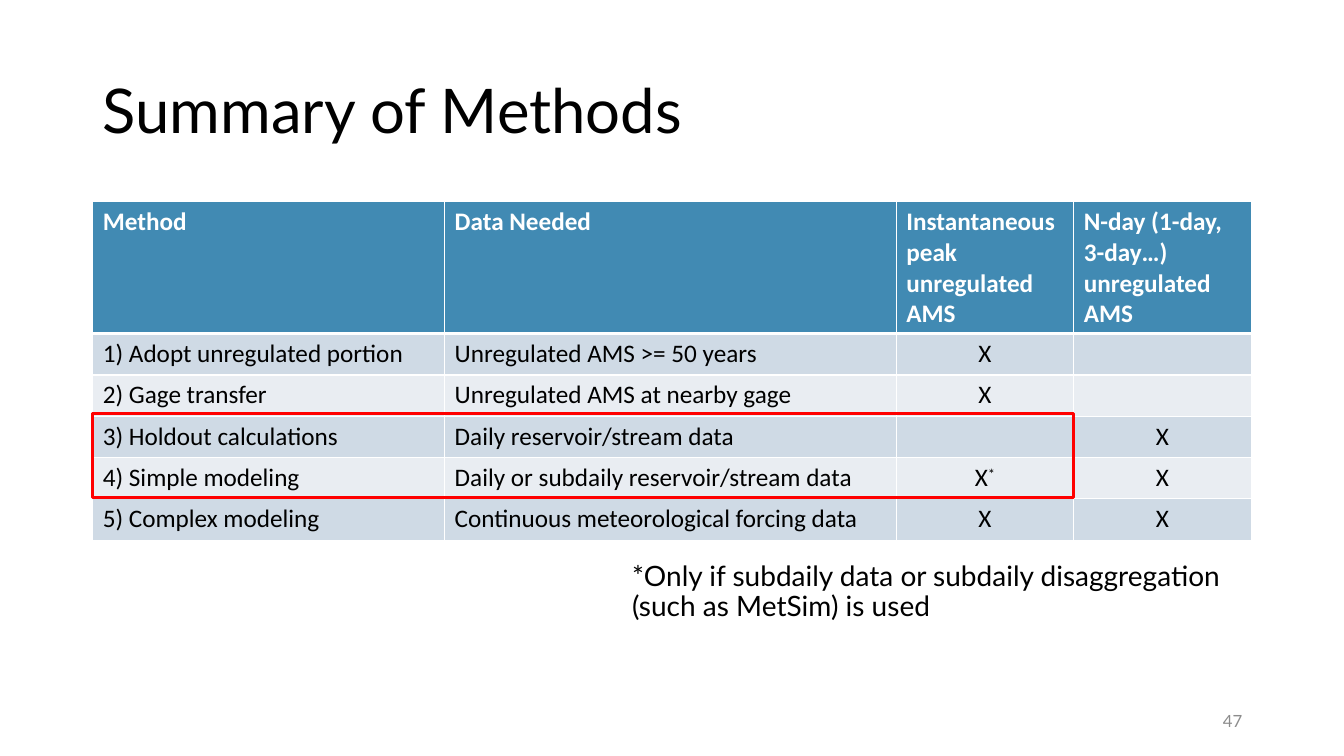
from dataclasses import dataclass

from lxml import etree
from pptx import Presentation, util as u
from pptx.dml.color import RGBColor
from pptx.enum import shapes, text
from pptx.oxml import ns

COLORS = {
    "black": "000000",
    "white": "FFFFFF",
    "header": "418AB3",
    "dark_band": "CFDAE5",
    "light_band": "E9EDF2",
    "highlight": "FF0000",
    "page_number": "8C8C8C",
}
COLUMN_WIDTHS = (3.49, 4.48, 1.76, 1.76)
HEADER_HEIGHT = 1.31
ROW_HEIGHT = 0.41
LEFT = 0.92
HEADINGS = (
    "Method",
    "Data Needed",
    "Instantaneous peak unregulated AMS",
    "N-day (1-day, 3-day…)\nunregulated AMS",
)


@dataclass(frozen=True)
class Method:
    name: str
    data_needed: str
    peak: str = ""
    n_day: str = ""


METHODS = (
    Method("1) Adopt unregulated portion", "Unregulated AMS >= 50 years", peak="X"),
    Method("2) Gage transfer", "Unregulated AMS at nearby gage", peak="X"),
    Method("3) Holdout calculations", "Daily reservoir/stream data", n_day="X"),
    Method("4) Simple modeling", "Daily or subdaily reservoir/stream data", "X*", "X"),
    Method("5) Complex modeling", "Continuous meteorological forcing data", "X", "X"),
)


def rgb(name: str) -> RGBColor:
    return RGBColor.from_string(COLORS[name])


def write(frame, content: str, *, size: float, font: str = "Lato",
          color: str = "black", bold: bool = False,
          align=text.PP_ALIGN.LEFT, spacing: float = 1.0) -> None:
    for index, line in enumerate(content.split("\n")):
        paragraph = frame.add_paragraph() if index else frame.paragraphs[0]
        paragraph.alignment = align
        paragraph.line_spacing = spacing
        paragraph.font.size = u.Pt(size)
        body, star, _ = line.partition("*") if line.endswith("*") else (line, "", "")
        for part in filter(None, (body, star)):
            run = paragraph.add_run()
            run.text = part
            run.font.size = u.Pt(size)
            run.font.name = font
            run.font.bold = bold
            run.font.color.rgb = rgb(color)
            if part == star:
                run._r.get_or_add_rPr().set("baseline", "30000")


def add_text(slide, content: str, left: float, top: float, width: float,
             height: float, anchor=text.MSO_ANCHOR.TOP, **style) -> None:
    box = slide.shapes.add_textbox(*map(u.Inches, (left, top, width, height)))
    box.text_frame.word_wrap = True
    box.text_frame.vertical_anchor = anchor
    write(box.text_frame, content, **style)


def set_borders(cell, **widths: float) -> None:
    properties = cell._tc.get_or_add_tcPr()
    for side in "LRTB":
        line = etree.SubElement(properties, ns.qn(f"a:ln{side}"),
                                w=str(u.Pt(widths.get(side, 1))))
        fill = etree.SubElement(line, ns.qn("a:solidFill"))
        etree.SubElement(fill, ns.qn("a:srgbClr"), val=COLORS["white"])


def format_cell(cell, content: str, fill: str, borders: dict[str, float],
                **style) -> None:
    set_borders(cell, **borders)
    cell.fill.solid()
    cell.fill.fore_color.rgb = rgb(fill)
    write(cell.text_frame, content, size=18, font="Calibri", **style)


def add_methods_table(slide) -> None:
    height = HEADER_HEIGHT + ROW_HEIGHT * len(METHODS)
    table = slide.shapes.add_table(
        len(METHODS) + 1, len(COLUMN_WIDTHS),
        *map(u.Inches, (LEFT, 2, sum(COLUMN_WIDTHS), height))).table
    for column, width in zip(table.columns, COLUMN_WIDTHS):
        column.width = u.Inches(width)
    for index, row in enumerate(table.rows):
        row.height = u.Inches(ROW_HEIGHT if index else HEADER_HEIGHT)
    for index, heading in enumerate(HEADINGS):
        format_cell(table.cell(0, index), heading, "header", {"B": 3},
                    color="white", bold=True)
    for row, method in enumerate(METHODS, 1):
        band = "dark_band" if row % 2 else "light_band"
        borders = {"T": 3} if row == 1 else {}
        values = (method.name, method.data_needed, method.peak, method.n_day)
        for column, value in enumerate(values):
            align = text.PP_ALIGN.CENTER if column > 1 else text.PP_ALIGN.LEFT
            format_cell(table.cell(row, column), value, band, borders, align=align)


def add_highlight(slide) -> None:
    frame = slide.shapes.add_shape(
        shapes.MSO_SHAPE.RECTANGLE, *map(u.Inches, (LEFT, 4.1, 9.73, 0.84)))
    frame.shadow.inherit = False
    frame.fill.background()
    frame.line.color.rgb = rgb("highlight")
    frame.line.width = u.Pt(2.25)


def main() -> None:
    deck = Presentation()
    deck.slide_width, deck.slide_height = u.Inches(13.33), u.Inches(7.5)
    slide = deck.slides.add_slide(deck.slide_layouts[6])
    add_text(slide, "Summary of Methods", LEFT, 0.4, 11.5, 1.45,
             anchor=text.MSO_ANCHOR.MIDDLE, size=44, spacing=0.9)
    add_methods_table(slide)
    add_text(slide,
             "*Only if subdaily data or subdaily disaggregation (such as MetSim) is used",
             6.17, 5.53, 6.38, 1.11, size=20, spacing=0.9)
    add_highlight(slide)
    add_text(slide, "47", 9.42, 6.95, 3, 0.4, anchor=text.MSO_ANCHOR.MIDDLE,
             size=12, color="page_number", align=text.PP_ALIGN.RIGHT)
    deck.save("out.pptx")


if __name__ == "__main__":
    main()
